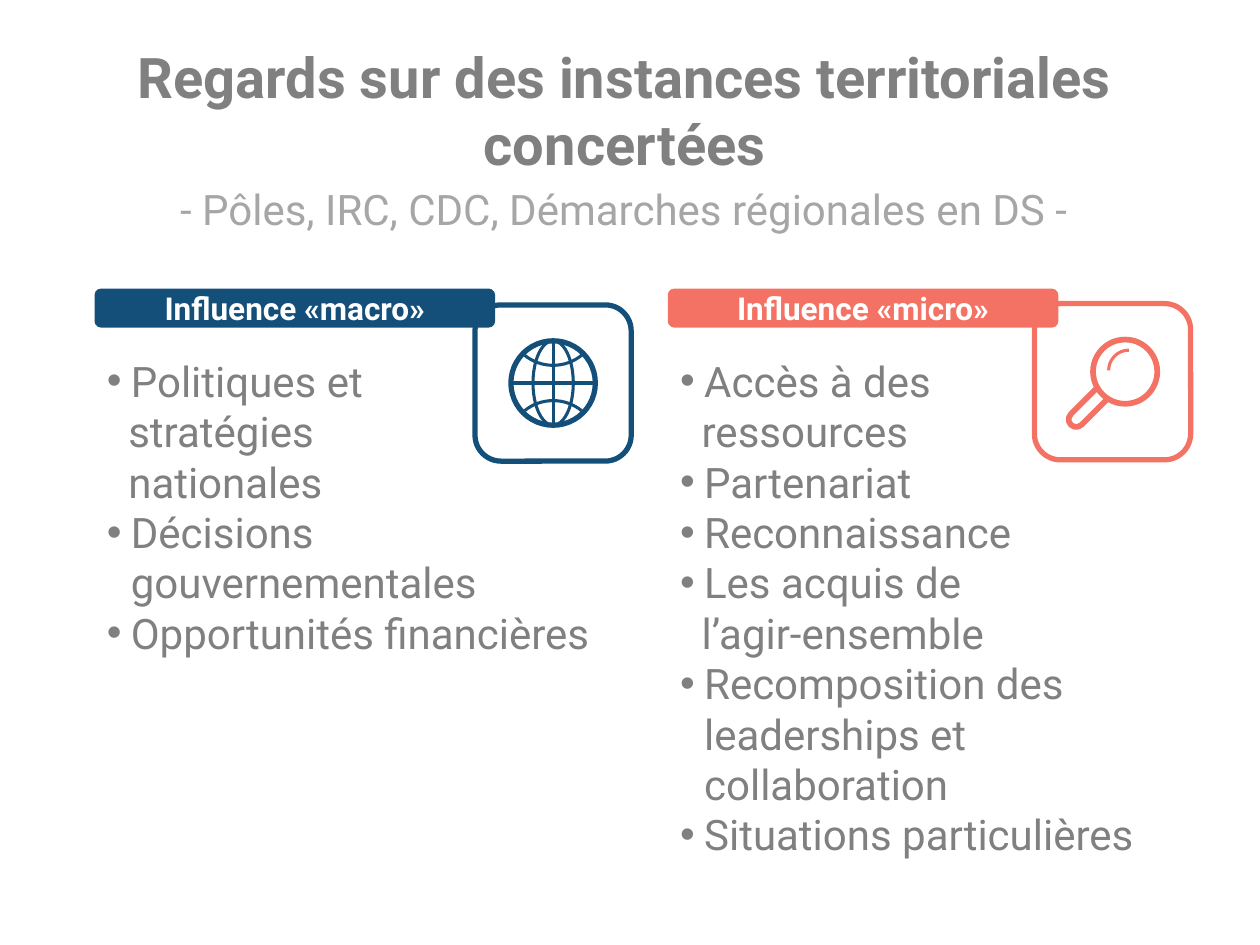
from dataclasses import dataclass
from math import cos, radians, sin

from lxml.etree import SubElement
from pptx import Presentation
from pptx.dml.color import RGBColor
from pptx.enum.shapes import MSO_CONNECTOR, MSO_SHAPE as Shape
from pptx.enum.text import MSO_ANCHOR as Anchor, MSO_AUTO_SIZE as AutoSize, PP_ALIGN as Align
from pptx.oxml.ns import qn
from pptx.util import Inches, Pt


@dataclass(frozen=True)
class Theme:
    font: str = "Roboto"
    grey: str = "808080"
    light_grey: str = "A6A6A6"
    white: str = "FFFFFF"
    blue: str = "144F7A"
    coral: str = "F47264"
    title_size: int = 32
    body_size: int = 24
    label_size: int = 18


THEME = Theme()


@dataclass(frozen=True)
class Point:
    text: str
    bullet: bool = True


@dataclass(frozen=True)
class Panel:
    label: str
    color: str
    left: float
    bar_width: float
    body_height: float
    frame_left: float
    frame_top: float
    points: tuple[Point, ...]


PANELS = (
    Panel("Influence «micro»", THEME.coral, 5.3, 3.1, 4.48, 8.21, 2.41,
          (Point("Accès à des"), Point("ressources", False),
           Point("Partenariat"), Point("Reconnaissance"),
           Point("Les acquis de"), Point("l’agir-ensemble", False),
           Point("Recomposition des leaderships et collaboration"),
           Point("Situations particulières"))),
    Panel("Influence «macro»", THEME.blue, 0.75, 3.18, 2.52, 3.77, 2.42,
          (Point("Politiques et"), Point("stratégies", False), Point("nationales", False),
           Point("Décisions gouvernementales"), Point("Opportunités financières"))),
)


def rgb(color: str) -> RGBColor:
    return RGBColor.from_string(color)


def style_para(para, size: int, color: str, bold: bool = False, align=Align.LEFT) -> None:
    para.alignment = align
    para.font.name = THEME.font
    para.font.size = Pt(size)
    para.font.bold = bold
    para.font.color.rgb = rgb(color)


def add_text(page, left: float, top: float, width: float, height: float):
    box = page.shapes.add_textbox(Inches(left), Inches(top), Inches(width), Inches(height))
    box.text_frame.word_wrap = True
    return box.text_frame


def style_shape(shape, fill: str | None, line: str | None, weight: float) -> None:
    shape.shadow.inherit = False
    if fill:
        shape.fill.solid()
        shape.fill.fore_color.rgb = rgb(fill)
    else:
        shape.fill.background()
    if line:
        shape.line.color.rgb = rgb(line)
        shape.line.width = Pt(weight)
    else:
        shape.line.fill.background()


def add_shape(page, kind, left: float, top: float, width: float, height: float,
              fill: str | None = None, line: str | None = None, weight: float = 3):
    shape = page.shapes.add_shape(kind, Inches(left), Inches(top), Inches(width), Inches(height))
    style_shape(shape, fill, line, weight)
    return shape


def add_centred(page, kind, x: float, y: float, width: float, height: float, **style):
    return add_shape(page, kind, x - width / 2, y - height / 2, width, height, **style)


def add_arc(page, x: float, y: float, radius: float, start: int, end: int,
            color: str, weight: float) -> None:
    """Open curve, clockwise in degrees from the right-hand side."""
    steps = 16
    angles = [radians(start + (end - start) * step / steps) for step in range(steps + 1)]
    points = [(Inches(x + radius * cos(a)), Inches(y + radius * sin(a))) for a in angles]
    builder = page.shapes.build_freeform(*points[0])
    builder.add_line_segments(points[1:], close=False)
    style_shape(builder.convert_to_shape(), None, color, weight)


def add_line(page, x1: float, y1: float, x2: float, y2: float, color: str, weight: float) -> None:
    line = page.shapes.add_connector(
        MSO_CONNECTOR.STRAIGHT, Inches(x1), Inches(y1), Inches(x2), Inches(y2))
    line.line.color.rgb = rgb(color)
    line.line.width = Pt(weight)
    SubElement(line._element.spPr, qn("a:effectLst"))


def indent_para(para, bullet: bool) -> None:
    props = para._p.get_or_add_pPr()
    props.set("marL", str(Inches(0.19 if bullet else 0.17)))
    props.set("indent", str(-Inches(0.19) if bullet else 0))
    if bullet:
        SubElement(props, qn("a:buFont")).set("typeface", "Arial")
        SubElement(props, qn("a:buChar")).set("char", "•")


def add_panel(page, panel: Panel) -> None:
    # Icon frame, partly covered by the label bar
    add_shape(page, Shape.ROUNDED_RECTANGLE, panel.frame_left, panel.frame_top, 1.24, 1.24,
              line=panel.color)
    bar = add_shape(page, Shape.ROUNDED_RECTANGLE, panel.left, 2.29, panel.bar_width, 0.31,
                    fill=panel.color)
    bar.text_frame.vertical_anchor = Anchor.MIDDLE
    label = bar.text_frame.paragraphs[0]
    label.text = panel.label
    style_para(label, THEME.label_size, THEME.white, True, Align.CENTER)

    # Bulleted points and their continuation lines
    frame = add_text(page, panel.left, 2.77, 4.15, panel.body_height)
    frame.auto_size = AutoSize.SHAPE_TO_FIT_TEXT
    for index, point in enumerate(panel.points):
        para = frame.add_paragraph() if index else frame.paragraphs[0]
        para.text = point.text
        style_para(para, THEME.body_size, THEME.grey)
        indent_para(para, point.bullet)


def add_globe(page, x: float, y: float, color: str) -> None:
    radius, thin = 0.335, 1.75
    add_centred(page, Shape.OVAL, x, y, 0.32, 2 * radius, line=color, weight=thin)
    add_line(page, x - radius, y, x + radius, y, color, thin)
    add_line(page, x, y - radius, x, y + radius, color, thin)
    add_arc(page, x, y - 0.5, 0.36, 51, 129, color, thin)
    add_arc(page, x, y + 0.5, 0.36, 231, 309, color, thin)
    add_centred(page, Shape.OVAL, x, y, 2 * radius, 2 * radius, line=color)


def add_magnifier(page, x: float, y: float, color: str) -> None:
    handle = add_centred(page, Shape.ROUNDED_RECTANGLE, x - 0.29, y + 0.28, 0.4, 0.12,
                         line=color, weight=3.25)
    handle.adjustments[0] = 0.5
    handle.rotation = 135
    add_centred(page, Shape.OVAL, x, y, 0.51, 0.51, fill=THEME.white, line=color, weight=3.25)
    add_arc(page, x + 0.03, y - 0.01, 0.16, 180, 270, color, 1.75)


def main() -> None:
    deck = Presentation()
    deck.slide_width, deck.slide_height = Inches(10), Inches(7.5)
    page = deck.slides.add_slide(deck.slide_layouts[6])

    # Title and subtitle
    frame = add_text(page, 0.46, 0.67, 9, 0.4)
    frame.vertical_anchor = Anchor.MIDDLE
    title = frame.paragraphs[0]
    title.text = "Regards sur des instances territoriales concertées"
    style_para(title, THEME.title_size, THEME.grey, True, Align.CENTER)

    subtitle = add_text(page, 0.45, 1.41, 9, 0.33).paragraphs[0]
    subtitle.text = "- Pôles, IRC, CDC, Démarches régionales en DS -"
    style_para(subtitle, THEME.body_size, THEME.light_grey, align=Align.CENTER)

    # Two panels and their icons
    for panel in PANELS:
        add_panel(page, panel)
    add_magnifier(page, 8.93, 2.95, THEME.coral)
    add_globe(page, 4.39, 3.04, THEME.blue)

    deck.save("out.pptx")


if __name__ == "__main__":
    main()
